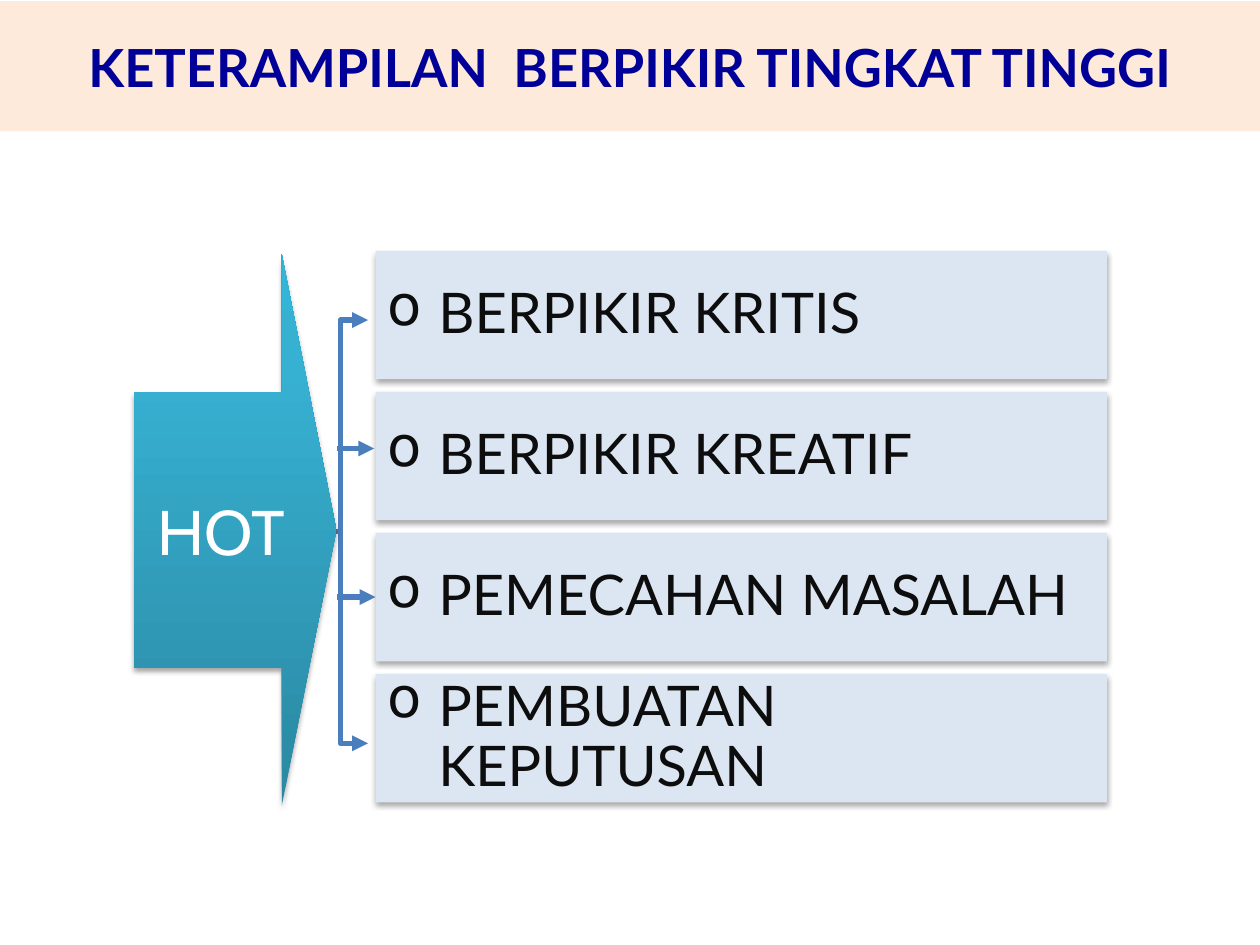
import dataclasses

import lxml.etree
import pptx
import pptx.dml.color
import pptx.enum.shapes
import pptx.enum.text
import pptx.oxml.ns
import pptx.util

Pt = pptx.util.Pt
SHAPES = pptx.enum.shapes.MSO_SHAPE
ALIGN = pptx.enum.text.PP_ALIGN


@dataclasses.dataclass(frozen=True)
class Theme:
    banner: str = "FDEADA"
    title: str = "000099"
    card: str = "DCE6F2"
    ink: str = "0D0D0D"
    line: str = "4B7EBC"
    white: str = "FFFFFF"
    gradient: tuple = ((0, "2A88A2"), (80, "37B1D2"), (100, "34B4D6"))
    font: str = "Lato"
    arrow_font: str = "Cabin"
    title_size: float = 30
    card_size: float = 32
    arrow_size: float = 36
    line_width: float = 3


def add_xml(parent, tag, **attributes):
    names = {name: str(value) for name, value in attributes.items()}
    return lxml.etree.SubElement(parent, pptx.oxml.ns.qn(tag), names)


def rgb(color):
    return pptx.dml.color.RGBColor.from_string(color)


class SlidePainter:
    """Draws the elements of one slide in a shared style."""

    def __init__(self, slide, theme):
        self.slide = slide
        self.theme = theme

    def shape(self, kind, left, top, width, height, fill=None):
        box = self.slide.shapes.add_shape(kind, Pt(left), Pt(top), Pt(width), Pt(height))
        box.shadow.inherit = False
        box.line.fill.background()
        if fill:
            box.fill.solid()
            box.fill.fore_color.rgb = rgb(fill)
        else:
            box.fill.background()
        return box

    def text(self, box, words, font, size, color, align, bold=False):
        frame = box.text_frame
        frame.word_wrap = True
        frame.vertical_anchor = pptx.enum.text.MSO_ANCHOR.MIDDLE
        para = frame.paragraphs[0]
        para.text = words
        para.alignment = align
        para.font.name = font
        para.font.size = Pt(size)
        para.font.bold = bold
        para.font.color.rgb = rgb(color)
        return para

    def drop_shadow(self, box):
        effects = box._element.spPr.find(pptx.oxml.ns.qn("a:effectLst"))
        shadow = add_xml(effects, "a:outerShdw", blurRad=Pt(3.1), dist=Pt(1.8),
                         dir=5400000, rotWithShape=0)
        color = add_xml(shadow, "a:srgbClr", val="000000")
        add_xml(color, "a:alpha", val=35000)

    def stroke(self, item, *ends):
        item.line.color.rgb = rgb(self.theme.line)
        item.line.width = Pt(self.theme.line_width)
        line = item._element.spPr.find(pptx.oxml.ns.qn("a:ln"))
        for end in ends:
            add_xml(line, end, type="triangle")

    def banner(self, words, left, top, width, height):
        theme = self.theme
        box = self.shape(SHAPES.RECTANGLE, left, top, width, height, theme.banner)
        self.text(box, words, theme.font, theme.title_size, theme.title, ALIGN.CENTER, True)

    def card(self, words, left, top, width, height):
        theme = self.theme
        box = self.shape(SHAPES.RECTANGLE, left, top, width, height, theme.card)
        self.drop_shadow(box)
        para = self.text(box, words, theme.font, theme.card_size, theme.ink, ALIGN.LEFT)
        para.line_spacing = 0.9
        para.space_before = Pt(0.2 * theme.card_size)
        properties = para._p.get_or_add_pPr()
        properties.set("marL", str(Pt(28.8)))
        properties.set("indent", str(Pt(-28.8)))
        bullet = lxml.etree.Element(pptx.oxml.ns.qn("a:buChar"), char="o")
        properties.find(pptx.oxml.ns.qn("a:defRPr")).addprevious(bullet)
        return box

    def brace(self, left, top, width, height):
        brace = self.shape(SHAPES.LEFT_BRACE, left, top, width, height)
        brace.adjustments[0] = 0
        brace.adjustments[1] = 0.5
        self.stroke(brace, "a:headEnd", "a:tailEnd")

    def branch(self, left, right, y, target=None):
        line = self.slide.shapes.add_connector(
            pptx.enum.shapes.MSO_CONNECTOR.STRAIGHT, Pt(left), Pt(y), Pt(right), Pt(y))
        if target is not None:
            line.end_connect(target, 1)
        self.stroke(line, "a:tailEnd")
        add_xml(line._element.spPr, "a:effectLst")

    def big_arrow(self, words, left, top, width, height):
        theme = self.theme
        arrow = self.shape(SHAPES.RIGHT_ARROW, left, top, width, height)
        arrow.adjustments[0] = 0.5
        arrow.adjustments[1] = 0.27
        arrow.fill.gradient()
        arrow.fill.gradient_angle = 90
        stops = arrow._element.spPr.find(".//" + pptx.oxml.ns.qn("a:gsLst"))
        for stop in list(stops):
            stops.remove(stop)
        for position, color in theme.gradient:
            stop = add_xml(stops, "a:gs", pos=position * 1000)
            add_xml(stop, "a:srgbClr", val=color)
        self.drop_shadow(arrow)
        self.text(arrow, words, theme.arrow_font, theme.arrow_size, theme.white, ALIGN.CENTER)


def main():
    deck = pptx.Presentation()
    deck.slide_width, deck.slide_height = Pt(720), Pt(540)
    painter = SlidePainter(deck.slides.add_slide(deck.slide_layouts[6]), Theme())

    painter.banner("KETERAMPILAN  BERPIKIR TINGKAT TINGGI", 0, 0.7, 720, 74.2)

    skills = ("BERPIKIR KRITIS", "BERPIKIR KREATIF", "PEMECAHAN MASALAH",
              "PEMBUATAN KEPUTUSAN")
    card_left, card_top, card_height, pitch = 214.6, 143.3, 73.4, 80.6
    painter.brace(178.6, 182.9, 31.7, 241.9)
    cards = [painter.card(skill, card_left, card_top + row * pitch, 418, card_height)
             for row, skill in enumerate(skills)]
    painter.branch(192.5, 213.8, 256.3)
    painter.branch(192.5, card_left, card_top + 2 * pitch + card_height / 2, cards[2])
    painter.big_arrow("HOT", 76.7, 145.4, 115.5, 315)

    deck.save("out.pptx")


if __name__ == "__main__":
    main()
